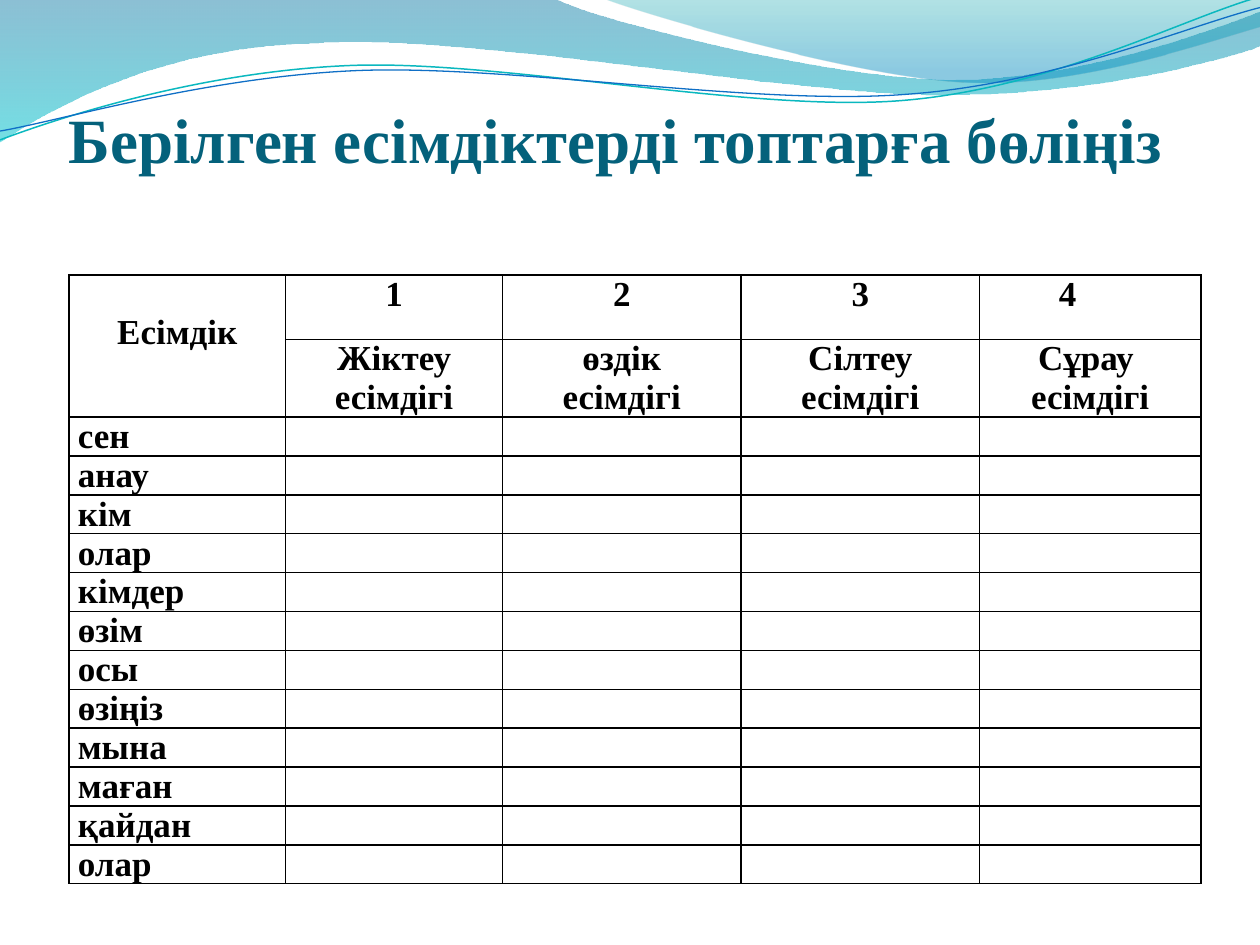
from math import cos, radians, sin
from lxml.etree import SubElement
from pptx import Presentation
from pptx.dml.color import RGBColor
from pptx.enum.text import MSO_ANCHOR, MSO_AUTO_SIZE, PP_ALIGN
from pptx.oxml.ns import qn
from pptx.util import Cm, Pt

HUES = {"title": "04617B", "ink": "000000", "deep": "0074A1", "aqua": "00C6CF",
        "teal": "00A1A9", "sky": "008BBF", "cyan": "0AB8BF", "blue": "0F6FC6"}
FONT = "Times New Roman"
TITLE = "Берілген есімдіктерді топтарға бөліңіз"
CORNER = "Есімдік"
GROUPS = [("1", "Жіктеу\nесімдігі"), ("2", "өздік\nесімдігі"),
          ("3", "Сілтеу\nесімдігі"), ("4", "Сұрау \nесімдігі")]
WORDS = ["сен", "анау", "кім", "олар", "кімдер", "өзім", "осы", "өзіңіз",
         "мына", "маған", "қайдан", "олар"]
COLS = [4.37, 4.37, 4.81, 4.81, 4.46]
ROWS = [1.3, 1.55] + [0.77] * len(WORDS)
TILT = -2.7

WAVES = [
    {"start": (0, 0),
     "steps": [[(4.4, -0.01)],
               [(4.76, 0.17), (6.64, 0.63), (7.58, 0.63)],
               [(8.53, 0.63), (9.58, 0.26), (10, 0.09)], [(10.01, 0.36)],
               [(9.83, 0.44), (8.7, 0.76), (7.46, 0.75)],
               [(6.22, 0.75), (3.82, 0.28), (2.57, 0.34)],
               [(1.29, 0.36), (0.46, 0.83), (-0.01, 1.13)], [(0, 0)]],
     "fill": [(0, "deep", 45), (1, "aqua", 55)]},
    {"start": (4.79, -0.01),
     "steps": [[(5.09, 0.11), (6.82, 0.62), (7.69, 0.65)],
               [(8.56, 0.69), (9.61, 0.32), (10, 0.21)], [(10, 0)],
               [(4.79, -0.01)]],
     "fill": [(0, "teal", 30), (0.8, "sky", 45)]},
    {"start": (0, 1.11),
     "steps": [[(0.48, 0.93), (1.58, 0.57), (2.77, 0.52)],
               [(3.95, 0.47), (5.93, 0.89), (7.13, 0.8)],
               [(8.33, 0.71), (9.38, 0.15), (9.98, -0.02)]],
     "line": ("cyan", 0.85), "mid": (4.99, 0.58)},
    {"start": (0, 1.04),
     "steps": [[(0.47, 0.96), (1.64, 0.61), (2.83, 0.56)],
               [(4.03, 0.51), (5.97, 0.84), (7.17, 0.75)],
               [(8.36, 0.67), (9.41, 0.21), (10, 0.06)]],
     "line": ("blue", 0.75), "mid": (4.99, 0.59)},
]


def hue(name):
    return RGBColor.from_string(HUES[name])


def put(item, vals):
    for key, val in vals.items():
        setattr(item, key, val)


def turn(dot, mid):
    c, s = cos(radians(TILT)), sin(radians(TILT))
    x, y = dot[0] - mid[0], dot[1] - mid[1]
    return mid[0] + x * c + y * s, mid[1] - x * s + y * c


def bend(shape, steps):
    path = next(shape.element.iter(qn("a:path")))
    legs = iter(path.findall(qn("a:lnTo")))
    for step in steps:
        part = [next(legs) for dot in step]
        if len(part) == 3:
            curve = SubElement(path, qn("a:cubicBezTo"))
            part[0].addprevious(curve)
            for leg in part:
                curve.append(leg[0])
                path.remove(leg)


def draw(shapes, wave):
    dots = [wave["start"]] + [dot for step in wave["steps"] for dot in step]
    if "mid" in wave:
        dots = [turn(dot, wave["mid"]) for dot in dots]
    dots = [(round(x * 2540), round(y * 2540)) for x, y in dots]
    pen = shapes.build_freeform(*dots[0], scale=Cm(0.001))
    pen.add_line_segments(dots[1:], close="fill" in wave)
    shape = pen.convert_to_shape()
    bend(shape, wave["steps"])
    shape.shadow.inherit = False
    if "line" in wave:
        name, width = wave["line"]
        shape.rotation = TILT
        shape.fill.background()
        shape.line.color.rgb = hue(name)
        shape.line.width = Pt(width)
        return
    shape.line.fill.background()
    shape.fill.gradient()
    shape.fill.gradient_angle = 270
    for stop, (pos, name, alpha) in zip(shape.fill.gradient_stops, wave["fill"]):
        stop.color.rgb = hue(name)
        stop.position = pos
    tags = shape.element.spPr.iter(qn("a:srgbClr"))
    for tag, (pos, name, alpha) in zip(tags, wave["fill"]):
        SubElement(tag, qn("a:alpha"), val=str(alpha * 1000))


def write(frame, text, size, name, align):
    frame.text = text
    for para in frame.paragraphs:
        para.alignment = align
        for run in para.runs:
            put(run.font, {"size": Pt(size), "name": FONT, "bold": True})
            run.font.color.rgb = hue(name)


def edge_cell(cell):
    put(cell, {"margin_left": Cm(0.18), "margin_right": Cm(0.18),
               "margin_top": 0, "margin_bottom": 0})
    props = cell._tc.get_or_add_tcPr()
    for side in ("lnL", "lnR", "lnT", "lnB"):
        edge = SubElement(props, qn("a:" + side), w=str(Pt(1)))
        SubElement(SubElement(edge, qn("a:solidFill")), qn("a:srgbClr"), val=HUES["ink"])
    cell.fill.background()


def fill_table(shapes):
    frame = shapes.add_table(len(ROWS), len(COLS), Cm(1.39), Cm(5.54),
                             Cm(sum(COLS)), Cm(sum(ROWS)))
    grid = frame.table
    put(grid, {"first_row": False, "horz_banding": False})
    for col, width in zip(grid.columns, COLS):
        col.width = Cm(width)
    for row, height in zip(grid.rows, ROWS):
        row.height = Cm(height)
    frame.height = Cm(13.16)
    for cell in grid.iter_cells():
        edge_cell(cell)
    mid = PP_ALIGN.CENTER
    texts = [(0, 0, CORNER, mid)]
    for c, pair in enumerate(GROUPS, 1):
        texts += [(r, c, text, mid) for r, text in enumerate(pair)]
    texts += [(r, 0, word, PP_ALIGN.JUSTIFY) for r, word in enumerate(WORDS, 2)]
    for r, c, text, align in texts:
        write(grid.cell(r, c).text_frame, text, 20, "ink", align)
    grid.cell(0, 0).merge(grid.cell(1, 0))
    grid.cell(0, 0).margin_top = Cm(0.78)
    last = grid.cell(0, len(GROUPS)).text_frame.paragraphs[0]
    last.alignment = PP_ALIGN.LEFT
    last._p.get_or_add_pPr().set("marL", str(Cm(1.42)))


def main():
    """Build the pronoun sorting slide."""
    deck = Presentation()
    put(deck, {"slide_width": Cm(25.4), "slide_height": Cm(19.05)})
    slide = deck.slides.add_slide(deck.slide_layouts[5])
    shapes = slide.shapes
    title = shapes.title
    for wave in WAVES:
        draw(shapes, wave)
    shapes.element.append(title.element)
    put(title, {"left": Cm(1.39), "top": Cm(1.4), "width": Cm(22.86), "height": Cm(2.16)})
    put(title.text_frame, {"margin_left": 0, "margin_right": 0, "margin_top": Cm(0.13),
                           "margin_bottom": 0, "word_wrap": True,
                           "auto_size": MSO_AUTO_SIZE.NONE,
                           "vertical_anchor": MSO_ANCHOR.BOTTOM})
    write(title.text_frame, TITLE, 36, "title", PP_ALIGN.LEFT)
    fill_table(shapes)
    deck.save("out.pptx")


if __name__ == "__main__":
    main()
